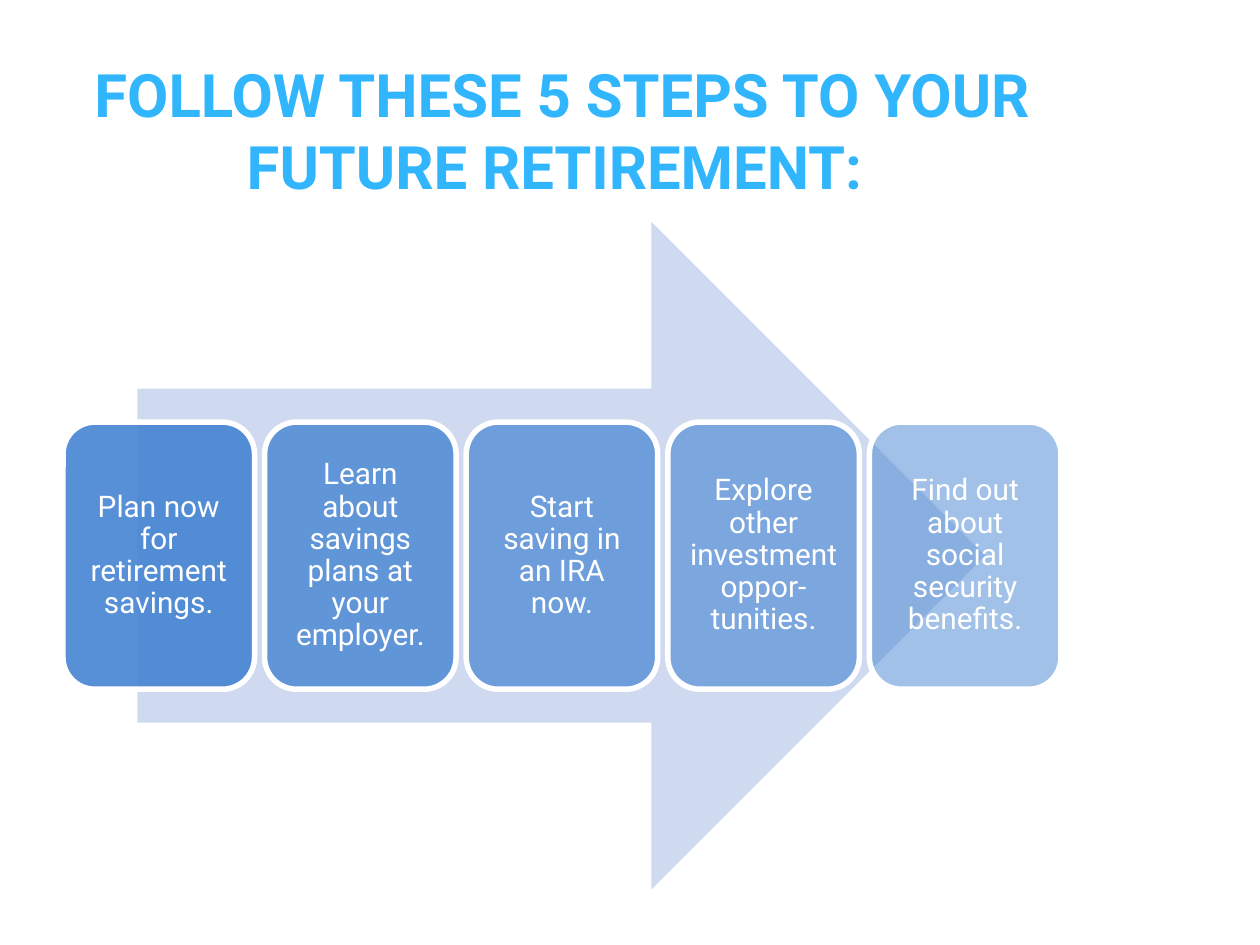
from lxml import etree
from pptx import Presentation
from pptx.dml.color import RGBColor
from pptx.enum.shapes import MSO_SHAPE
from pptx.enum.text import MSO_ANCHOR, MSO_AUTO_SIZE, PP_ALIGN
from pptx.oxml.ns import qn
from pptx.util import Inches, Pt

COLORS = {"title": "31B6FD", "arrow": "CFD9EF", "step": "4584D3", "white": "FFFFFF"}
FONT = "Roboto"
STEPS = [
    "Plan now for retirement savings.",
    "Learn about savings plans at your employer.",
    "Start saving in an IRA now.",
    "Explore other investment oppor-tunities.",
    "Find out about social security benefits.",
]
STEP_LEFT, STEP_PITCH = 0.5, 1.6


def color(name):
    return RGBColor.from_string(COLORS[name])


class SlideBuilder:
    def __init__(self, deck):
        self.slide = deck.slides.add_slide(deck.slide_layouts[5])

    def set_text(self, shape, text, size, color_name, anchor, insets, bold=False, spacing=1.0):
        """Fill a shape with one centred paragraph; insets are horizontal, vertical."""
        frame = shape.text_frame
        frame.text = text
        frame.word_wrap = True
        frame.auto_size = MSO_AUTO_SIZE.NONE
        frame.vertical_anchor = anchor
        frame.margin_left = frame.margin_right = Inches(insets[0])
        frame.margin_top = frame.margin_bottom = Inches(insets[1])
        para = frame.paragraphs[0]
        para.alignment = PP_ALIGN.CENTER
        para.line_spacing = spacing
        font = para.runs[0].font
        font.name = FONT
        font.size = Pt(size)
        font.bold = bold
        font.color.rgb = color(color_name)

    def title(self, text, left, top, width, height):
        title = self.slide.shapes.title
        title.left, title.top = Inches(left), Inches(top)
        title.width, title.height = Inches(width), Inches(height)
        self.set_text(title, text, 34.2, "title", MSO_ANCHOR.BOTTOM, (0.05, 0), bold=True)

    def shape(self, kind, fill, left, top, width, height):
        shape = self.slide.shapes.add_shape(
            kind, Inches(left), Inches(top), Inches(width), Inches(height))
        shape.shadow.inherit = False
        shape.fill.solid()
        shape.fill.fore_color.rgb = color(fill)
        shape.line.fill.background()
        return shape

    def arrow(self, left, top, width, height):
        self.shape(MSO_SHAPE.RIGHT_ARROW, "arrow", left, top, width, height)

    def step(self, text, opacity, left, top, width, height):
        """Add a rounded box whose fill has the given opacity in percent."""
        box = self.shape(MSO_SHAPE.ROUNDED_RECTANGLE, "step", left, top, width, height)
        fill_color = box._element.spPr.find(qn("a:solidFill"))[0]
        etree.SubElement(fill_color, qn("a:alpha"), val=str(opacity * 1000))
        box.line.color.rgb = color("white")
        box.line.width = Pt(3.15)
        self.set_text(box, text, 17, "white", MSO_ANCHOR.MIDDLE, (0.07, 0.07), spacing=0.9)


def main():
    deck = Presentation()
    deck.slide_width, deck.slide_height = Inches(10), Inches(7.5)
    builder = SlideBuilder(deck)
    builder.title("FOLLOW THESE 5 STEPS TO YOUR FUTURE RETIREMENT: ", 0.5, 0.35, 7.92, 1.25)
    builder.arrow(1.09, 1.76, 6.73, 5.3)
    for index, text in enumerate(STEPS):
        builder.step(text, 90 - 10 * index, STEP_LEFT + index * STEP_PITCH, 3.35, 1.52, 2.12)
    deck.save("out.pptx")


if __name__ == "__main__":
    main()
